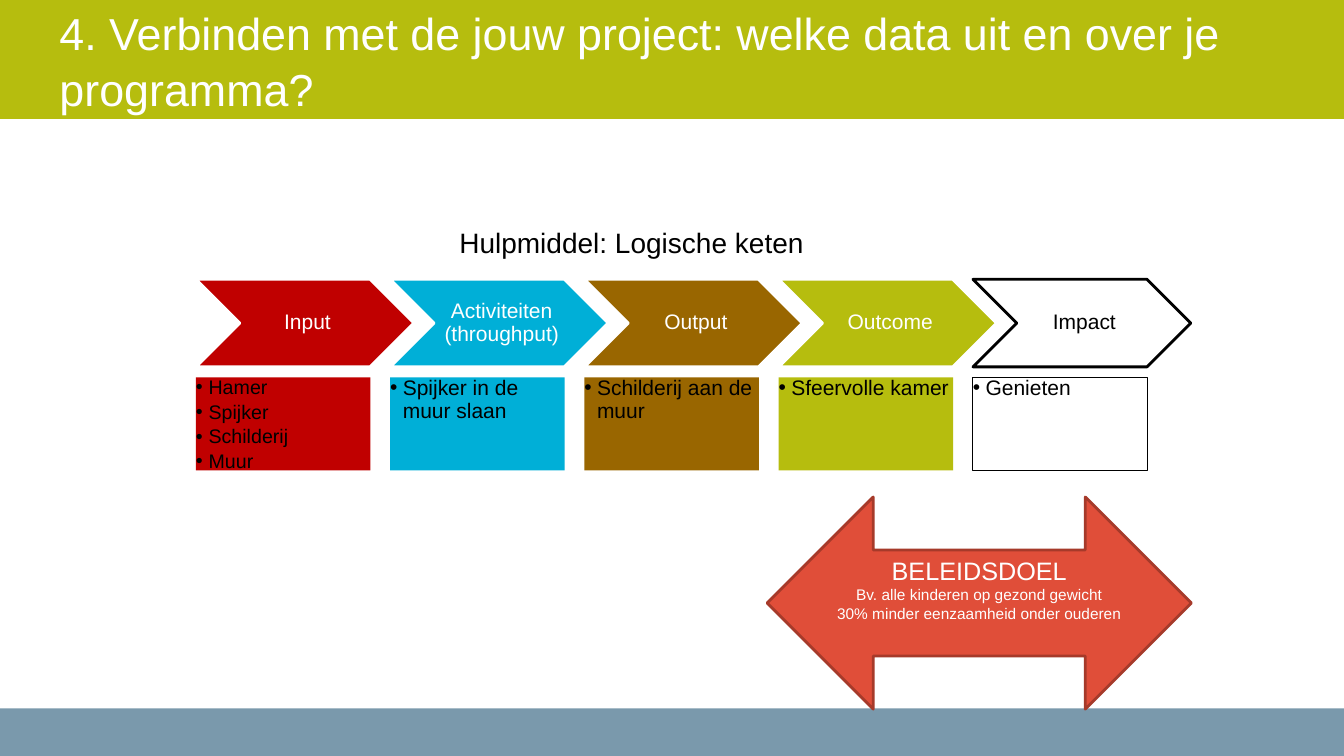
from dataclasses import dataclass

from lxml.etree import SubElement
from pptx import Presentation
from pptx.dml.color import RGBColor
from pptx.enum.shapes import MSO_SHAPE
from pptx.enum.text import MSO_ANCHOR, MSO_AUTO_SIZE, PP_ALIGN
from pptx.oxml.ns import qn
from pptx.util import Pt


@dataclass(frozen=True)
class Theme:
    font: str = "Arial"
    white: str = "FFFFFF"
    black: str = "000000"
    lime: str = "B6BD0E"
    slate: str = "7A99AC"
    red: str = "C00000"
    blue: str = "00AFD7"
    brown: str = "996600"
    coral: str = "E04E39"
    rust: str = "A63A2A"
    title: float = 32
    head: float = 20
    goal: float = 18
    step: float = 15
    dense: float = 14
    note: float = 11


T = Theme()
WIDE, HIGH = 960, 540

# Label, fill, label colour, chevron line, box line, items, item size
STEPS = [
    ("Input", T.red, T.white, T.white, None,
     ["Hamer", "Spijker", "Schilderij", "Muur"], T.dense),
    ("Activiteiten (throughput)", T.blue, T.white, T.white, None,
     ["Spijker in de muur slaan"], T.step),
    ("Output", T.brown, T.white, T.white, None,
     ["Schilderij aan de muur"], T.step),
    ("Outcome", T.lime, T.white, T.white, None,
     ["Sfeervolle kamer"], T.step),
    ("Impact", T.white, T.black, T.black, T.black,
     ["Genieten"], T.step),
]


def paint(shape, fill, line=None, width=2):
    shape.fill.solid()
    shape.fill.fore_color.rgb = RGBColor.from_string(fill)
    if line:
        shape.line.color.rgb = RGBColor.from_string(line)
        shape.line.width = Pt(width)
    else:
        shape.line.fill.background()


def draw(slide, kind, box, fill, line=None, width=2):
    shape = slide.shapes.add_shape(kind, *map(Pt, box))
    shape.shadow.inherit = False
    paint(shape, fill, line, width)
    return shape


def frame(shape, inset, anchor=MSO_ANCHOR.MIDDLE, wrap=True):
    """Set up the text frame; inset is left, top, right, bottom."""
    text = shape.text_frame
    text.word_wrap = wrap
    text.auto_size = MSO_AUTO_SIZE.NONE
    text.vertical_anchor = anchor
    (text.margin_left, text.margin_top,
     text.margin_right, text.margin_bottom) = map(Pt, inset)
    return text


def write(text, lines, align=PP_ALIGN.LEFT, space=1.0):
    """Fill a frame with lines of (words, size, colour)."""
    paras = []
    for n, (words, size, color) in enumerate(lines):
        para = text.add_paragraph() if n else text.paragraphs[0]
        para.alignment = align
        para.line_spacing = space
        run = para.add_run()
        run.text = words
        run.font.name = T.font
        run.font.size = Pt(size)
        run.font.color.rgb = RGBColor.from_string(color)
        paras.append(para)
    return paras


def bullet(para, indent):
    para.space_after = Pt(2.5)
    props = para._p.get_or_add_pPr()
    props.set("marL", str(Pt(indent)))
    props.set("indent", str(Pt(-indent)))
    SubElement(props, qn("a:buFont"), typeface=T.font)
    SubElement(props, qn("a:buChar"), char="•")


def banner(slide, box, words):
    title = slide.shapes.title
    title.left, title.top, title.width, title.height = map(Pt, box)
    paint(title, T.lime)
    text = frame(title, (42.5, 11.5, 14.4, 11.5))
    write(text, [(words, T.title, T.white)], space=1.05)


def caption(slide, box, words):
    shape = slide.shapes.add_textbox(*map(Pt, box))
    text = frame(shape, (7.2, 3.6, 7.2, 3.6), MSO_ANCHOR.TOP, wrap=False)
    write(text, [(words, T.head, T.black)])


def stage(slide, box, step):
    """Place one link of the chain: a chevron above its list box."""
    left, top, width, height = box
    label, fill, ink, edge, rim, items, size = step
    tall, list_wide, list_high = 62.6, 124.6, 66.4
    arrow = draw(slide, MSO_SHAPE.CHEVRON, (left, top, width, tall),
                 fill, edge)
    write(frame(arrow, (5, 1.4, 1.4, 1.4)), [(label, T.step, ink)],
          PP_ALIGN.CENTER, 0.9)
    card = draw(slide, MSO_SHAPE.RECTANGLE,
                (left, top + height - list_high, list_wide, list_high),
                fill, rim, 0.75)
    text = frame(card, (0, 0, 0, 0), MSO_ANCHOR.TOP)
    lines = [(item, size, T.black) for item in items]
    for para in write(text, lines, space=0.9):
        bullet(para, 9)


def chain(slide, box, steps):
    left, top, width, height = box
    wide = 155.6
    pitch = (width - wide) / (len(steps) - 1)
    for n, step in enumerate(steps):
        stage(slide, (left + n * pitch, top, wide, height), step)


def goal(slide, box):
    arrow = draw(slide, MSO_SHAPE.LEFT_RIGHT_ARROW, box, T.coral, T.rust)
    text = frame(arrow, (7.2, 3.6, 7.2, 24.3))
    write(text, [
        ("BELEIDSDOEL", T.goal, T.white),
        ("Bv. alle kinderen op gezond gewicht", T.note, T.white),
        ("30% minder eenzaamheid onder ouderen", T.note, T.white),
    ], PP_ALIGN.CENTER)


def main():
    deck = Presentation()
    deck.slide_width, deck.slide_height = Pt(WIDE), Pt(HIGH)
    slide = deck.slides.add_slide(deck.slide_layouts[5])
    banner(slide, (0, 0, WIDE, 85),
           "4. Verbinden met de jouw project: "
           "welke data uit en over je programma?")
    draw(slide, MSO_SHAPE.RECTANGLE, (0, 506, WIDE, HIGH - 506), T.slate)
    caption(slide, (321, 157.5, 263, 31.5), "Hulpmiddel: Logische keten")
    chain(slide, (140, 199.5, 710.6, 136.5), STEPS)
    goal(slide, (548, 355, 303, 151.5))
    deck.save("out.pptx")


if __name__ == "__main__":
    main()
